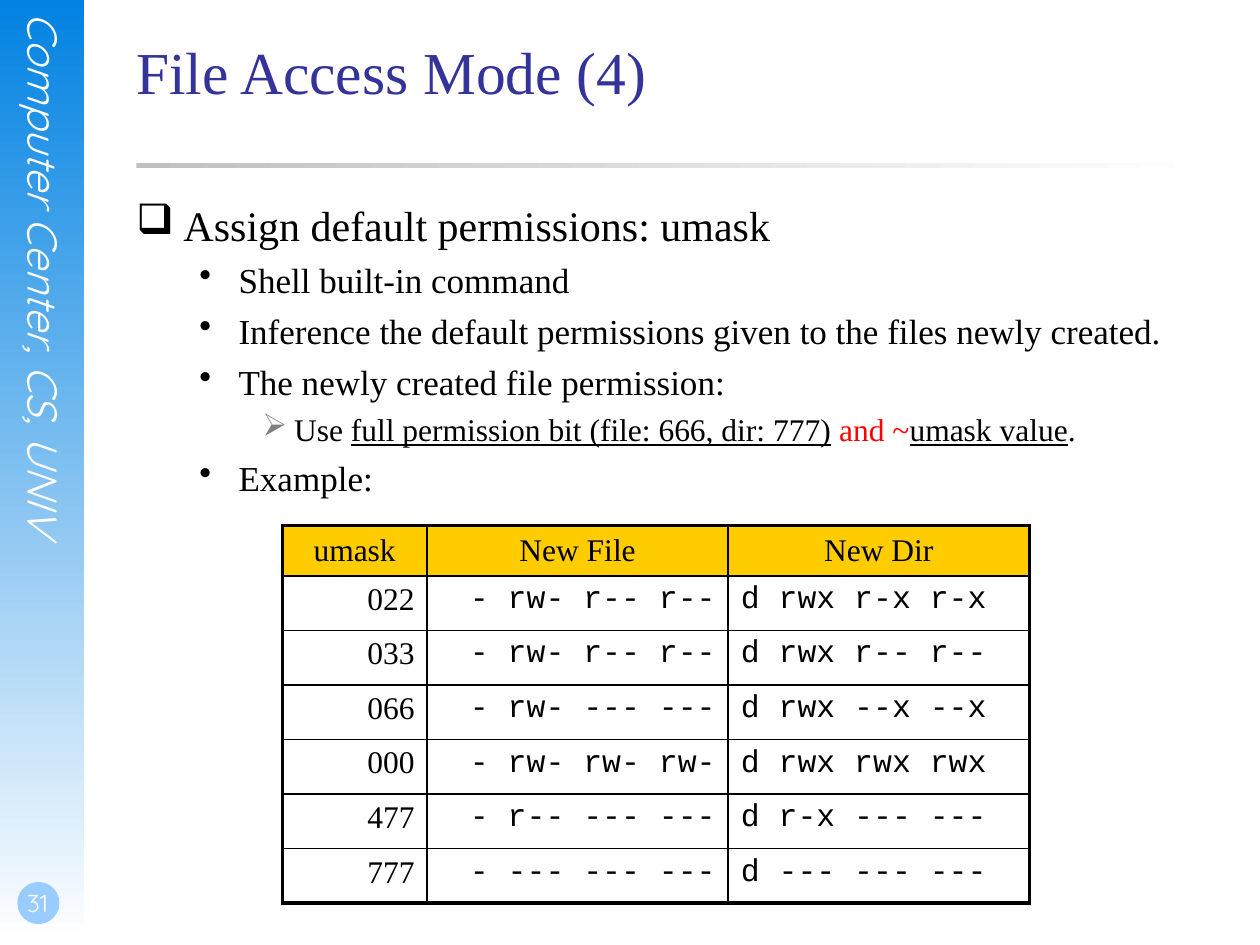
"""Build the File Access Mode slide with its umask table."""
import pptx
import pptx.dml.color
import pptx.enum.shapes
import pptx.enum.text
import pptx.oxml.ns
import pptx.util
from lxml import etree

Cm, Pt = pptx.util.Cm, pptx.util.Pt
qn = pptx.oxml.ns.qn
rgb = pptx.dml.color.RGBColor.from_string
SHAPE = pptx.enum.shapes.MSO_SHAPE
ALIGN = pptx.enum.text.PP_ALIGN
ANCHOR = pptx.enum.text.MSO_ANCHOR
SERIF, MONO, SANS = "Times New Roman", "Courier New", "Quicksand"
BLACK = "000000"


def style(r, size, font, color):
    r.font.size = Pt(size)
    r.font.name = font
    r.font.color.rgb = rgb(color)


def add_text(left, top, width, height, text, size, font, color):
    tf = slide.shapes.add_textbox(Cm(left), Cm(top), Cm(width), Cm(height)).text_frame
    tf.word_wrap = True
    tf.margin_left = tf.margin_top = tf.margin_right = tf.margin_bottom = 0
    if text:
        tf.text = text
        style(tf.paragraphs[0].runs[0], size, font, color)
    return tf


prs = pptx.Presentation()
prs.slide_width, prs.slide_height = Cm(25.4), Cm(19.05)
slide = prs.slides.add_slide(prs.slide_layouts[6])

decorations = [
    (SHAPE.RECTANGLE, 0, 0, 1.7, 19.05, "0282E2", 270),
    (SHAPE.OVAL, 0.35, 17.78, 0.85, 0.85, "99CCFF", None),
    (SHAPE.RECTANGLE, 2.75, 3.28, 21.59, 0.1, "C0C0C0", 0),
]
for kind, left, top, width, height, color, angle in decorations:
    sp = slide.shapes.add_shape(kind, Cm(left), Cm(top), Cm(width), Cm(height))
    sp.shadow.inherit = False
    sp.line.fill.background()
    if angle is None:
        sp.fill.solid()
        sp.fill.fore_color.rgb = rgb(color)
    else:
        sp.fill.gradient()
        sp.fill.gradient_angle = angle
        for stop, stop_color in zip(sp.fill.gradient_stops, (color, "FFFFFF")):
            stop.color.rgb = rgb(stop_color)

tf = add_text(0.38, 0.25, 1.02, 12.98, "Computer Center, CS, UNIV", 24, SANS, "FFFFFF")
tf._txBody.bodyPr.set("vert", "eaVert")
tf.paragraphs[0].runs[0].font.italic = True

tf = add_text(0, 17.35, 1.47, 1.27, "31", 14, SANS, "FFFFFF")
tf.vertical_anchor = ANCHOR.BOTTOM
tf.margin_left, tf.margin_bottom = Cm(0.05), Cm(0.13)
tf.paragraphs[0].alignment = ALIGN.CENTER

add_text(2.75, 0.7, 21.59, 3.18, "File Access Mode (4)", 34, SERIF, "333399")

levels = [
    (24, 0.95, 0.95, "\u2751", BLACK),
    (20, 2.06, 0.79, "\u2022", BLACK),
    (18, 3.18, 0.64, "\u27a2", "808080"),
]
outline = [
    (0, [("Assign default permissions: umask", BLACK, False)]),
    (1, [("Shell built-in command", BLACK, False)]),
    (1, [("Inference the default permissions given to the files newly created.", BLACK, False)]),
    (1, [("The newly created file permission:", BLACK, False)]),
    (2, [("Use ", BLACK, False),
         ("full permission bit (file: 666, dir: 777)", BLACK, True),
         (" ", BLACK, False),
         ("and ~", "FF0000", False),
         ("umask value", BLACK, True),
         (".", BLACK, False)]),
    (1, [("Example:", BLACK, False)]),
]
tf = add_text(2.75, 4.02, 21.59, 12.9, "", 24, SERIF, BLACK)
for i, (level, runs) in enumerate(outline):
    size, margin, hanging, bullet, bullet_color = levels[level]
    p = tf.add_paragraph() if i else tf.paragraphs[0]
    p.level = level
    for text, color, underlined in runs:
        r = p.add_run()
        r.text = text
        style(r, size, SERIF, color)
        r.font.underline = underlined
    pPr = p._p.get_or_add_pPr()
    pPr.set("marL", str(Cm(margin)))
    pPr.set("indent", str(-Cm(hanging)))
    before = etree.SubElement(pPr, qn("a:spcBef"))
    etree.SubElement(before, qn("a:spcPct"), val="25000")
    clr = etree.SubElement(pPr, qn("a:buClr"))
    etree.SubElement(clr, qn("a:srgbClr"), val=bullet_color)
    etree.SubElement(pPr, qn("a:buChar"), char=bullet)

rows = [
    ("umask", "New File", "New Dir"),
    ("022", "- rw- r-- r--", "d rwx r-x r-x"),
    ("033", "- rw- r-- r--", "d rwx r-- r--"),
    ("066", "- rw- --- ---", "d rwx --x --x"),
    ("000", "- rw- rw- rw-", "d rwx rwx rwx"),
    ("477", "- r-- --- ---", "d r-x --- ---"),
    ("777", "- --- --- ---", "d --- --- ---"),
]
widths = [2.92, 6.07, 6.07]
aligns = [ALIGN.RIGHT, ALIGN.RIGHT, ALIGN.LEFT]
fonts = [SERIF, MONO, MONO]
last_row, last_col = len(rows) - 1, len(widths) - 1
table = slide.shapes.add_table(len(rows), len(widths), Cm(5.69), Cm(10.59),
                               Cm(sum(widths)), Cm(7.6)).table
table.first_row = table.horz_banding = False
for col, width in zip(table.columns, widths):
    col.width = Cm(width)
for i, values in enumerate(rows):
    header = i == 0
    table.rows[i].height = Cm(1.01 if header else 1.1)
    for j, value in enumerate(values):
        cell = table.cell(i, j)
        cell.text_frame.text = value
        p = cell.text_frame.paragraphs[0]
        p.alignment = ALIGN.CENTER if header else aligns[j]
        style(p.runs[0], 18, SERIF if header else fonts[j], BLACK)
        cell.vertical_anchor = ANCHOR.MIDDLE if header else ANCHOR.TOP
        tcPr = cell._tc.get_or_add_tcPr()
        outer = {"lnL": j == 0, "lnR": j == last_col, "lnT": header, "lnB": i == last_row}
        for side, thick in outer.items():
            ln = etree.SubElement(tcPr, qn("a:" + side), w=str(Pt(2.25 if thick else 1)))
            fill = etree.SubElement(ln, qn("a:solidFill"))
            etree.SubElement(fill, qn("a:srgbClr"), val=BLACK)
        if header:
            cell.fill.solid()
            cell.fill.fore_color.rgb = rgb("FFCC00")
        else:
            cell.fill.background()

prs.save("out.pptx")
